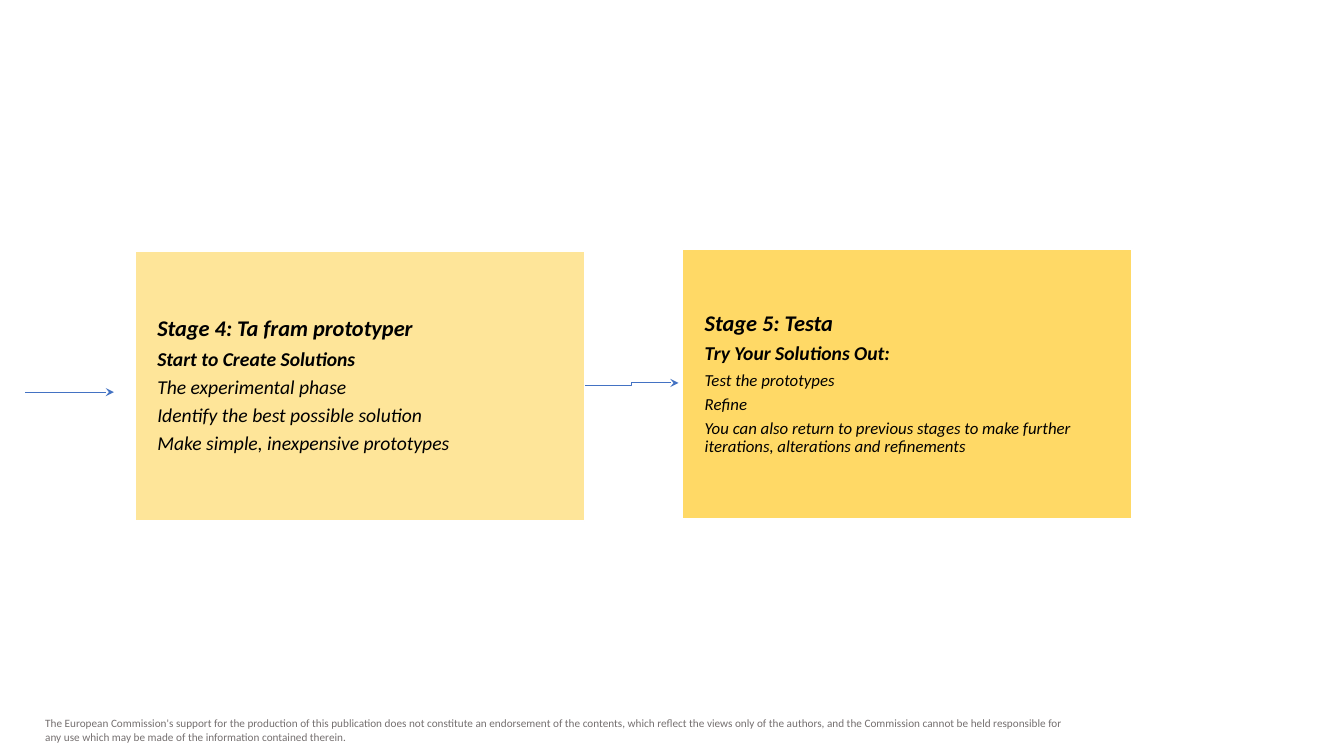
import pptx
import pptx.dml.color
import pptx.enum.shapes
import pptx.enum.text
import pptx.oxml
import pptx.oxml.ns
import pptx.util
from pptx.util import Inches

RGBColor = pptx.dml.color.RGBColor
CONNECTOR = pptx.enum.shapes.MSO_CONNECTOR

BLACK = RGBColor(0x00, 0x00, 0x00)
WHITE = RGBColor(0xFF, 0xFF, 0xFF)
GREY = RGBColor(0x75, 0x70, 0x70)
BLUE = RGBColor(0x43, 0x72, 0xC3)
PALE_YELLOW = RGBColor(0xFE, 0xE5, 0x99)
YELLOW = RGBColor(0xFF, 0xD9, 0x66)

STAGE_TOP = 2.49
STAGE_WIDTH, STAGE_HEIGHT = 4.46, 2.68

DISCLAIMER = (
    "The European Commission's support for the production of this publication does not "
    "constitute an endorsement of the contents, which reflect the views only of the authors, "
    "and the Commission cannot be held responsible for any use which may be made of the "
    "information contained therein."
)


def write(para, text, size, color=BLACK, bold=False, italic=False, before=0, spacing=None):
    span = para.add_run()
    span.text = text
    font = span.font
    font.name = "Calibri"
    font.size = pptx.util.Pt(size)
    font.color.rgb = color
    font.bold = bold
    font.italic = italic
    para.alignment = pptx.enum.text.PP_ALIGN.LEFT
    if before:
        para.space_before = pptx.util.Pt(before)
    if spacing:
        para.line_spacing = spacing


class StageSlide:
    def __init__(self, page):
        self.page = page

    def footer(self, text, left, top, width, height):
        box = self.page.shapes.add_textbox(
            Inches(left), Inches(top), Inches(width), Inches(height))
        box.text_frame.word_wrap = True
        write(box.text_frame.paragraphs[0], text, size=8, color=GREY)

    def stage(self, left, top, fill, lines):
        box = self.page.shapes.add_shape(
            pptx.enum.shapes.MSO_SHAPE.RECTANGLE,
            Inches(left), Inches(top), Inches(STAGE_WIDTH), Inches(STAGE_HEIGHT))
        box.shadow.inherit = False
        box.fill.solid()
        box.fill.fore_color.rgb = fill
        box.line.color.rgb = WHITE
        box.line.width = pptx.util.Pt(1)
        frame = box.text_frame
        frame.word_wrap = True
        frame.vertical_anchor = pptx.enum.text.MSO_ANCHOR.MIDDLE
        frame.margin_left = frame.margin_right = Inches(0.22)
        frame.margin_top = frame.margin_bottom = Inches(0.23)
        previous_size = 0
        for index, (text, size) in enumerate(lines):
            para = frame.paragraphs[0] if index == 0 else frame.add_paragraph()
            write(para, text, size, bold=index < 2, italic=True,
                  before=0.35 * previous_size, spacing=0.9)
            previous_size = size

    def arrow(self, kind, start, end):
        arrow = self.page.shapes.add_connector(
            kind, *(Inches(value) for value in (*start, *end)))
        arrow.line.color.rgb = BLUE
        arrow.line.width = pptx.util.Pt(0.75)
        line = arrow.line._get_or_add_ln()
        tail = pptx.oxml.parse_xml(
            f'<a:tailEnd {pptx.oxml.ns.nsdecls("a")} type="stealth"/>')
        line.append(tail)
        effects = pptx.oxml.parse_xml(f'<a:effectLst {pptx.oxml.ns.nsdecls("a")}/>')
        line.addnext(effects)


def main():
    deck = pptx.Presentation()
    deck.slide_width = Inches(13.33)
    deck.slide_height = Inches(7.5)
    slide = StageSlide(deck.slides.add_slide(deck.slide_layouts[6]))

    slide.footer(DISCLAIMER, 0.35, 7.06, 10.46, 0.37)
    slide.arrow(CONNECTOR.ELBOW, (5.8, 3.83), (6.73, 3.8))
    slide.stage(1.34, STAGE_TOP, PALE_YELLOW, [
        ("Stage 4: Ta fram prototyper", 16),
        ("Start to Create Solutions", 14),
        ("The experimental phase", 14),
        ("Identify the best possible solution", 14),
        ("Make simple, inexpensive prototypes", 14),
    ])
    slide.stage(6.77, STAGE_TOP - 0.02, YELLOW, [
        ("Stage 5: Testa", 16),
        ("Try Your Solutions Out:", 14),
        ("Test the prototypes", 12),
        ("Refine", 12),
        ("You can also return to previous stages to make further "
         "iterations, alterations and refinements", 12),
    ])
    slide.arrow(CONNECTOR.STRAIGHT, (0.25, 3.89), (1.13, 3.89))
    deck.save("out.pptx")


if __name__ == "__main__":
    main()
